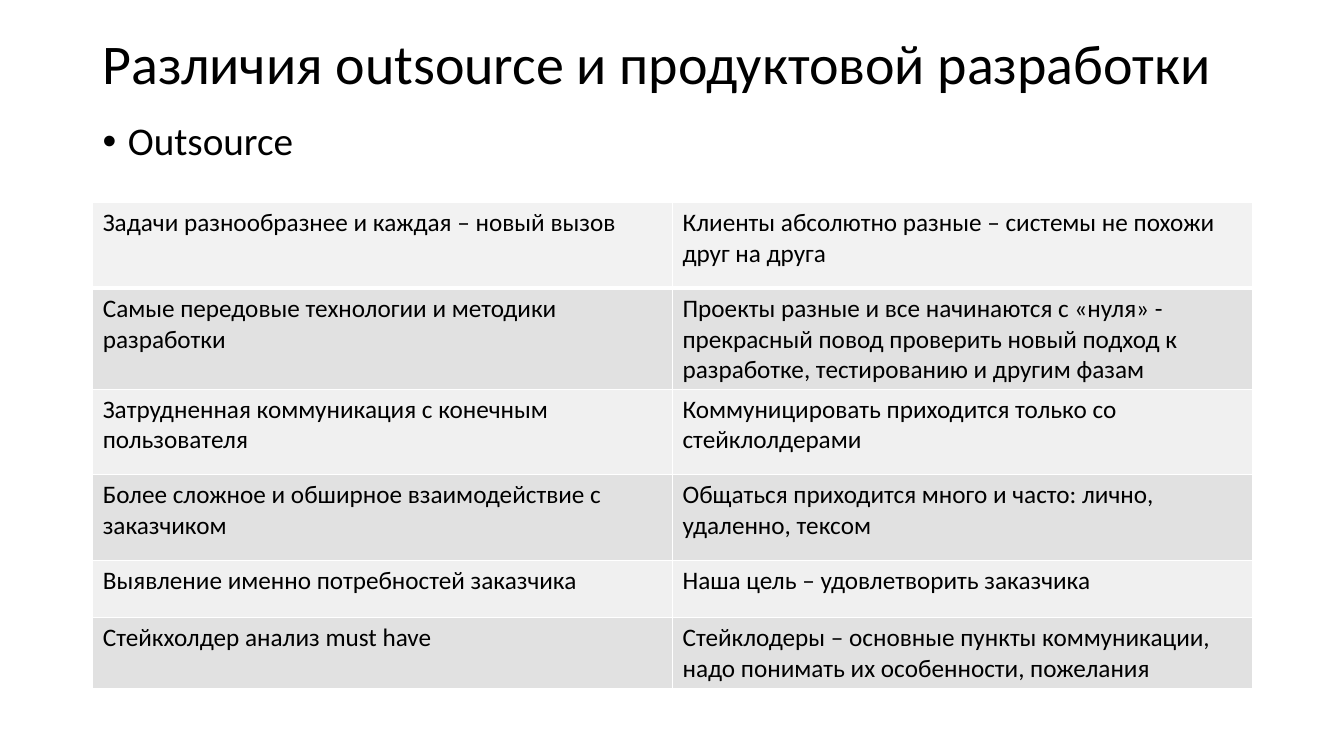
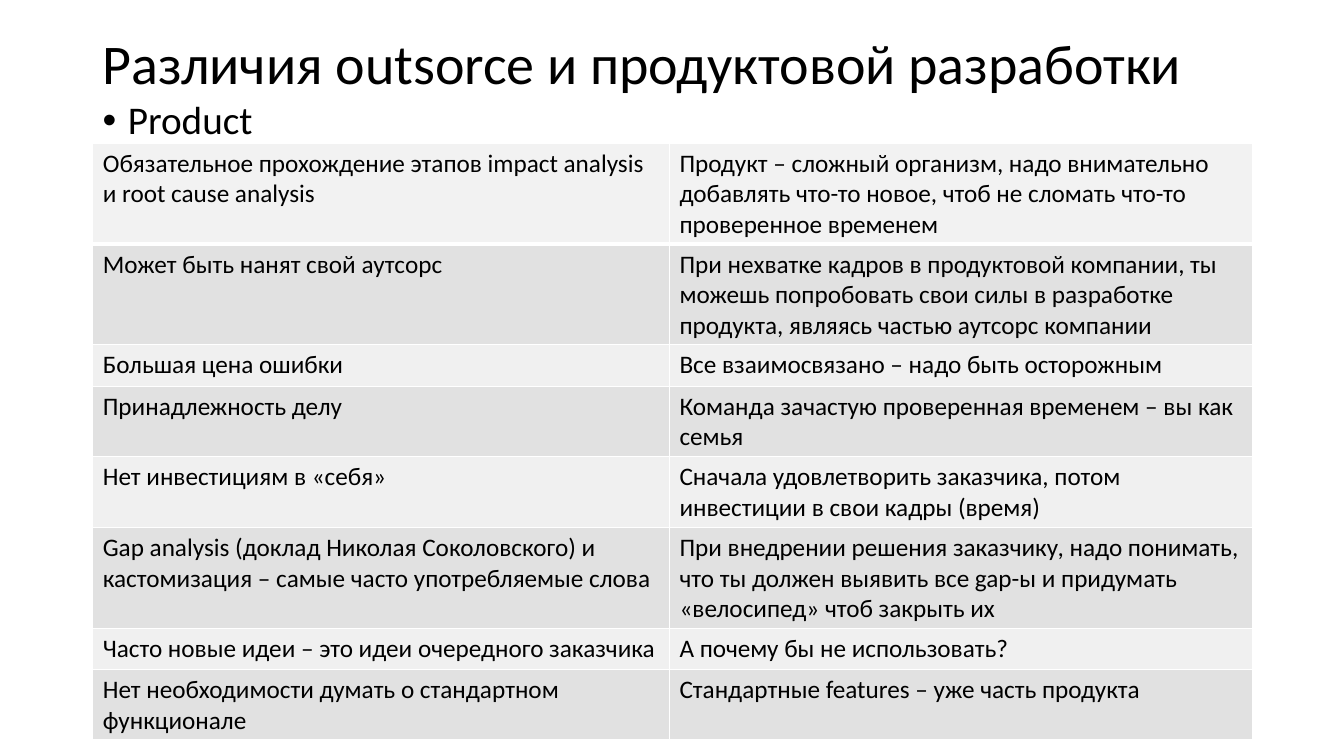
import dataclasses

import lxml.etree
import pptx
import pptx.dml.color
import pptx.enum.text
import pptx.oxml.ns
import pptx.util

Inches = pptx.util.Inches
qualified = pptx.oxml.ns.qn


@dataclasses.dataclass(frozen=True)
class Theme:
    """Colours, type sizes and line widths shared by the slides."""

    font: str = "Calibri"
    ink: str = "000000"
    border: str = "FFFFFF"
    first_row: str = "F2F2F2"
    bands: tuple = ("F0F0F0", "E1E1E1")
    title_size: int = 40
    heading_size: int = 28
    cell_size: int = 18
    line_width: float = 1
    first_row_line_width: float = 3


THEME = Theme()
LEFT, WIDTH = 0.92, 11.5

OUTSOURCE = [
    ("Задачи разнообразнее и каждая – новый вызов",
     "Клиенты абсолютно разные – системы не похожи друг на друга"),
    ("Самые передовые технологии и методики разработки",
     "Проекты разные и все начинаются с «нуля» - прекрасный повод проверить "
     "новый подход к разработке, тестированию и другим фазам"),
    ("Затрудненная коммуникация с конечным пользователя",
     "Коммуницировать приходится только со стейклолдерами"),
    ("Более сложное и обширное взаимодействие с заказчиком",
     "Общаться приходится много и часто: лично, удаленно, тексом"),
    ("Выявление именно потребностей заказчика",
     "Наша цель – удовлетворить заказчика"),
    ("Стейкхолдер анализ must have",
     "Стейклодеры – основные пункты коммуникации, надо понимать их "
     "особенности, пожелания"),
]

PRODUCT = [
    ("Обязательное прохождение этапов impact analysis и root cause analysis",
     "Продукт – сложный организм, надо внимательно добавлять что-то новое, "
     "чтоб не сломать что-то проверенное временем"),
    ("Может быть нанят свой аутсорс",
     "При нехватке кадров в продуктовой компании, ты можешь попробовать свои "
     "силы в разработке продукта, являясь частью аутсорс компании"),
    ("Большая цена ошибки",
     "Все взаимосвязано – надо быть осторожным"),
    ("Принадлежность делу",
     "Команда зачастую проверенная временем – вы как семья"),
    ("Нет инвестициям в «себя»",
     "Сначала удовлетворить заказчика, потом инвестиции в свои кадры (время)"),
    ("Gap analysis (доклад Николая Соколовского) и кастомизация – самые часто "
     "употребляемые слова",
     "При внедрении решения заказчику, надо понимать, что ты должен выявить "
     "все gap-ы и придумать «велосипед» чтоб закрыть их"),
    ("Часто новые идеи – это идеи очередного заказчика",
     "А почему бы не использовать?"),
    ("Нет необходимости думать о стандартном функционале",
     "Стандартные features – уже часть продукта"),
]


def style_font(paragraph, size):
    """Apply the theme font to a paragraph."""
    paragraph.font.name = THEME.font
    paragraph.font.size = pptx.util.Pt(size)
    paragraph.font.color.rgb = pptx.dml.color.RGBColor.from_string(THEME.ink)


def add_text(slide, box, text):
    """Add a wrapped text box and return its frame and paragraph."""
    frame = slide.shapes.add_textbox(*map(Inches, box)).text_frame
    frame.word_wrap = True
    paragraph = frame.paragraphs[0]
    paragraph.text = text
    paragraph.line_spacing = 0.9
    return frame, paragraph


def add_title(slide, box, text):
    """Add the slide title, centred vertically in its box."""
    frame, paragraph = add_text(slide, box, text)
    frame.vertical_anchor = pptx.enum.text.MSO_ANCHOR.MIDDLE
    style_font(paragraph, THEME.title_size)


def add_heading(slide, box, text):
    """Add the bulleted heading at the top of its box."""
    paragraph = add_text(slide, box, text)[1]
    paragraph.space_before = pptx.util.Pt(10)
    properties = paragraph._p.get_or_add_pPr()
    properties.set("marL", str(Inches(0.25)))
    properties.set("indent", str(Inches(-0.25)))
    lxml.etree.SubElement(properties, qualified("a:buFont"), typeface="Arial")
    lxml.etree.SubElement(properties, qualified("a:buChar"), char="•")
    style_font(paragraph, THEME.heading_size)


def add_border(cell, side, width):
    """Draw one side of a cell border."""
    line = lxml.etree.SubElement(
        cell._tc.get_or_add_tcPr(), qualified(f"a:ln{side}"), w=str(pptx.util.Pt(width)))
    fill = lxml.etree.SubElement(line, qualified("a:solidFill"))
    lxml.etree.SubElement(fill, qualified("a:srgbClr"), val=THEME.border)


def style_cell(cell, row):
    """Set the borders, fill and font of a cell by its row."""
    thick_side = {0: "B", 1: "T"}.get(row)
    for side in "LRTB":
        thick = side == thick_side
        add_border(cell, side, THEME.first_row_line_width if thick else THEME.line_width)
    cell.fill.solid()
    color = THEME.bands[row % 2] if row else THEME.first_row
    cell.fill.fore_color.rgb = pptx.dml.color.RGBColor.from_string(color)
    style_font(cell.text_frame.paragraphs[0], THEME.cell_size)


def add_comparison(slide, left, top, column_widths, row_heights, rows):
    """Add the banded table with its corner at left and top."""
    size = sum(column_widths), sum(row_heights)
    table = slide.shapes.add_table(
        len(rows), len(column_widths), *map(Inches, (left, top, *size))).table
    table.first_row = False
    table.horz_banding = False
    for column, width in zip(table.columns, column_widths):
        column.width = Inches(width)
    for index, (height, texts) in enumerate(zip(row_heights, rows)):
        table.rows[index].height = Inches(height)
        for column, text in enumerate(texts):
            cell = table.cell(index, column)
            cell.text = text
            style_cell(cell, index)


def add_slide(presentation, title, title_span, heading, heading_span,
              table_top, column_widths, row_heights, rows):
    """Add a slide with a title, a bulleted heading and a table."""
    slide = presentation.slides.add_slide(presentation.slide_layouts[6])
    for add_part, text, (top, height) in (
            (add_title, title, title_span), (add_heading, heading, heading_span)):
        add_part(slide, (LEFT, top, WIDTH, height), text)
    add_comparison(slide, LEFT, table_top, column_widths, row_heights, rows)


def main():
    """Build and save the presentation."""
    presentation = pptx.Presentation()
    presentation.slide_width = Inches(13.33)
    presentation.slide_height = Inches(7.5)
    add_slide(presentation, "Различия outsource и продуктовой разработки", (0.16, 1),
              "Outsource", (1.16, 5.6), 2.01, (5.75, 5.75),
              [0.85] * 4 + [0.57, 0.49], OUTSOURCE)
    add_slide(presentation, "Различия outsorce и продуктовой разработки", (0.18, 0.96),
              "Product", (0.95, 5.81), 1.42, (5.72, 5.78),
              [0.41] * len(PRODUCT), PRODUCT)
    presentation.save("out.pptx")


if __name__ == "__main__":
    main()
